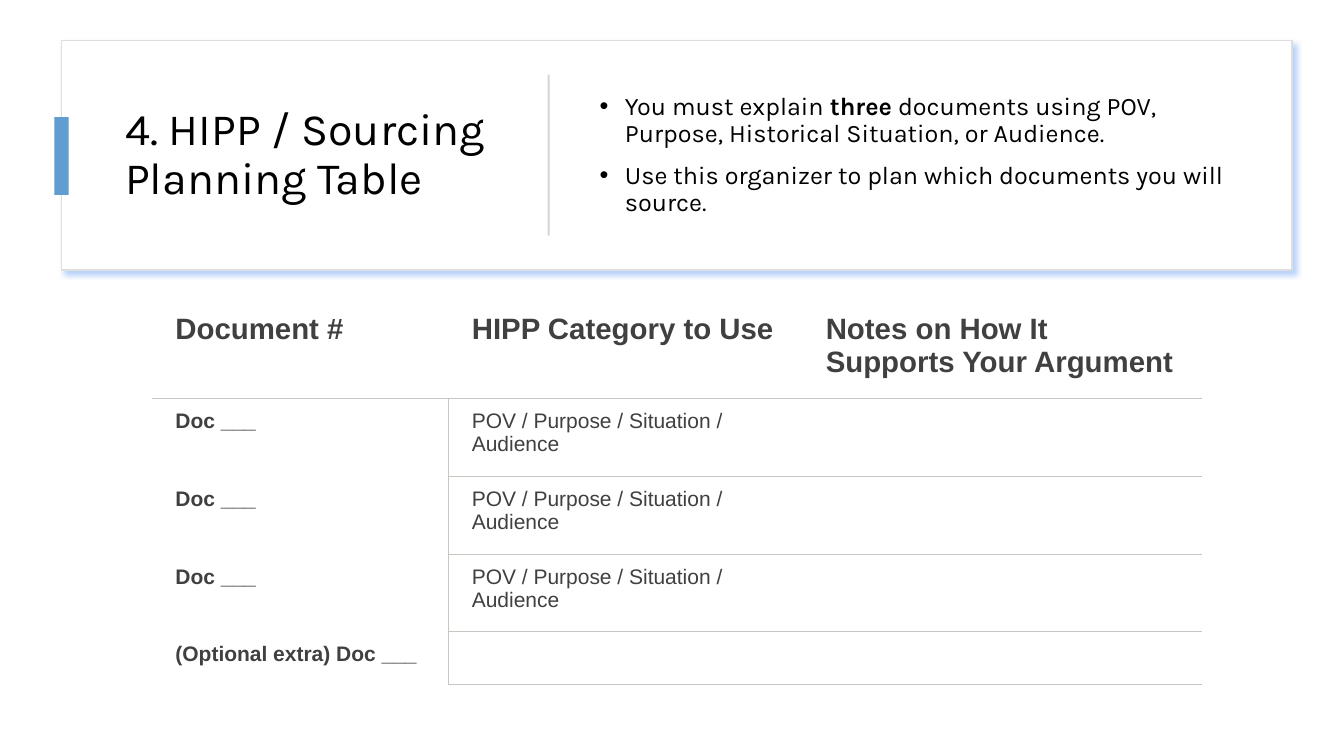
import pptx
import pptx.util
import pptx.oxml
import pptx.oxml.ns
import pptx.dml.color
import pptx.enum.shapes
import pptx.enum.text

Cm, Pt = pptx.util.Cm, pptx.util.Pt
NS = pptx.oxml.ns.nsdecls("a")
COLORS = {"paper": "FFFFFF", "edge": "DEDEDE", "shadow": "71A6F5", "accent": "629DD1",
          "divider": "D5D5D5", "ink": "000000", "table_ink": "404040", "rule": "C7C6C1"}
TITLE = {"name": "Karla", "size": Pt(32), "bold": False}
BODY = {"name": "Karla", "size": Pt(18), "bold": False}
HEAD = {"name": "Arial", "size": Pt(21), "bold": True}
LABEL = {"name": "Arial", "size": Pt(15), "bold": True}
CELL = {"name": "Arial", "size": Pt(15), "bold": False}
BULLETS = [
    [("You must explain ", False), ("three", True),
     (" documents using POV, Purpose, Historical Situation, or Audience.", False)],
    [("Use this organizer to plan which documents you will source.", False)],
]
CATEGORIES = "POV / Purpose / Situation / Audience"
ROWS = [("Document #", "HIPP Category to Use", "Notes on How It Supports Your Argument"),
        *[("Doc ___", CATEGORIES, "")] * 3,
        ("(Optional extra) Doc ___", "", "")]
COLUMN_WIDTHS = [7.47, 8.92, 10.06]
ROW_HEIGHTS = [2.44, 1.96, 1.96, 1.96, 1.32]


def rgb(name):
    """Return the named colour."""
    return pptx.dml.color.RGBColor.from_string(COLORS[name])


def apply(target, values):
    """Set attributes from a dict of format values."""
    for name, value in values.items():
        setattr(target, name, value)


def add_span(para, text, style, color):
    """Add a formatted run to a paragraph."""
    span = para.add_run()
    span.text = text
    apply(span.font, style)
    span.font.color.rgb = rgb(color)


def add_block(page, left, top, width, height, color):
    """Add a plain filled rectangle."""
    block = page.shapes.add_shape(pptx.enum.shapes.MSO_SHAPE.RECTANGLE,
                                  Cm(left), Cm(top), Cm(width), Cm(height))
    block.shadow.inherit = False
    block.fill.solid()
    block.fill.fore_color.rgb = rgb(color)
    block.line.fill.background()
    return block


def format_frame(frame):
    """Wrap the text and centre it vertically."""
    apply(frame, {"word_wrap": True, "auto_size": pptx.enum.text.MSO_AUTO_SIZE.NONE,
                  "vertical_anchor": pptx.enum.text.MSO_ANCHOR.MIDDLE})


def add_header(page, left, top, width, height):
    """Draw the card with its title, accent, divider and bullets."""
    title = page.shapes.title
    card = add_block(page, left, top, width, height, "paper")
    card.line.color.rgb = rgb("edge")
    card.line.width = Pt(1)
    effects = card.element.spPr.find(pptx.oxml.ns.qn("a:effectLst"))
    effects.append(pptx.oxml.parse_xml(
        f'<a:outerShdw {NS} blurRad="{Pt(4)}" dist="{Pt(3)}" dir="2700000" algn="tl" '
        f'rotWithShape="0"><a:srgbClr val="{COLORS["shadow"]}"><a:alpha val="50000"/>'
        '</a:srgbClr></a:outerShdw>'))
    title.element.addprevious(card.element)

    text_top, text_height = top + 0.61, height - 1.22
    apply(title, {"left": Cm(left + 1.35), "top": Cm(text_top),
                  "width": Cm(9.88), "height": Cm(text_height)})
    format_frame(title.text_frame)
    para = title.text_frame.paragraphs[0]
    apply(para, {"alignment": pptx.enum.text.PP_ALIGN.LEFT, "line_spacing": 0.9})
    add_span(para, "4. HIPP / Sourcing Planning Table", TITLE, "ink")

    add_block(page, left - 0.18, top + 1.93, 0.36, 1.96, "accent")
    add_block(page, left + 12.25, top + 0.86, 0.05, 4.06, "divider")

    box = page.shapes.add_textbox(Cm(left + 13.31), Cm(text_top), Cm(16.66), Cm(text_height))
    format_frame(box.text_frame)
    for index, spans in enumerate(BULLETS):
        para = box.text_frame.add_paragraph() if index else box.text_frame.paragraphs[0]
        apply(para, {"line_spacing": 0.9, "space_before": Pt(10)})
        props = para._p.get_or_add_pPr()
        props.set("marL", str(Cm(0.64)))
        props.set("indent", str(Cm(-0.64)))
        props.append(pptx.oxml.parse_xml(f'<a:buFont {NS} typeface="Arial"/>'))
        props.append(pptx.oxml.parse_xml(f'<a:buChar {NS} char="•"/>'))
        for text, bold in spans:
            add_span(para, text, {**BODY, "bold": bold}, "ink")


def set_borders(cell, row, column):
    """Rule the cell under the heading, beside the labels and under the entries."""
    entry, body = column > 0, row > 0
    ruled = {"lnL": body and column == 1, "lnR": body and column == 0,
             "lnT": row == 1 or (body and entry), "lnB": not body or entry}
    props = cell._tc.get_or_add_tcPr()
    for tag, shown in ruled.items():
        paint = (f'<a:solidFill><a:srgbClr val="{COLORS["rule"]}"/></a:solidFill>'
                 if shown else "<a:noFill/>")
        props.append(pptx.oxml.parse_xml(f'<a:{tag} {NS} w="{Pt(0.75)}">{paint}</a:{tag}>'))


def add_planner(page, left, top):
    """Draw the sourcing table."""
    frame = page.shapes.add_table(len(ROWS), len(COLUMN_WIDTHS), Cm(left), Cm(top),
                                  Cm(sum(COLUMN_WIDTHS)), Cm(sum(ROW_HEIGHTS)))
    table = frame.table
    apply(table, {"first_row": False, "horz_banding": False})
    for column, width in zip(table.columns, COLUMN_WIDTHS):
        column.width = Cm(width)
    for row, height in zip(table.rows, ROW_HEIGHTS):
        row.height = Cm(height)
    for row, texts in enumerate(ROWS):
        for column, text in enumerate(texts):
            cell = table.cell(row, column)
            set_borders(cell, row, column)
            cell.fill.background()
            apply(cell, {"margin_left": Cm(0.58), "margin_right": Cm(0.43),
                         "margin_top": Cm(0.28), "margin_bottom": Cm(0.28)})
            if text:
                style = HEAD if row == 0 else LABEL if column == 0 else CELL
                add_span(cell.text_frame.paragraphs[0], text, style, "table_ink")


def main():
    """Build and save the slide."""
    deck = pptx.Presentation()
    apply(deck, {"slide_width": Cm(33.87), "slide_height": Cm(19.05)})
    page = deck.slides.add_slide(deck.slide_layouts[5])
    add_header(page, 1.55, 1.02, 31.01, 5.79)
    add_planner(page, 3.84, 7.6)
    deck.save("out.pptx")


if __name__ == "__main__":
    main()
